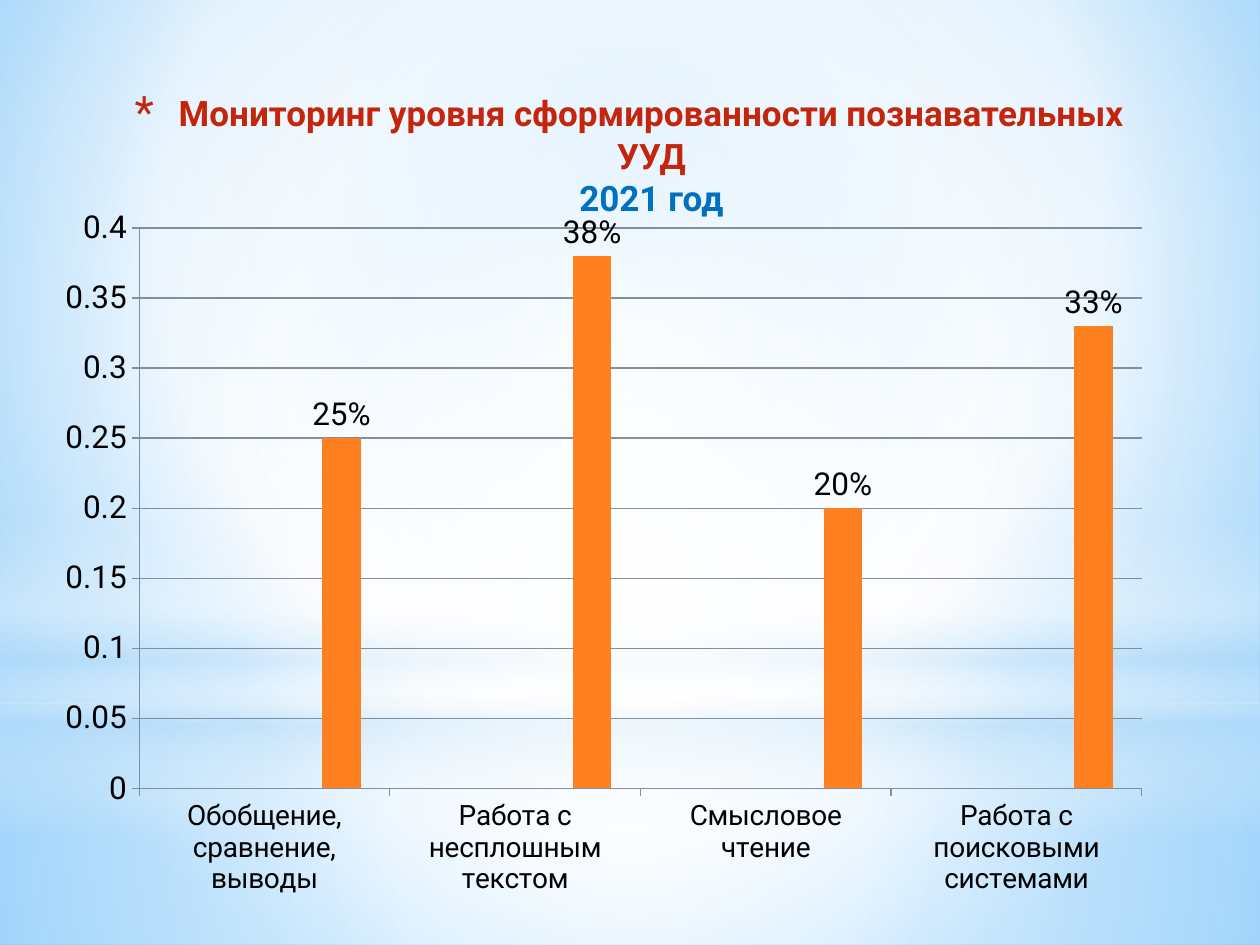
from lxml import etree
from pptx import Presentation
from pptx.chart.data import CategoryChartData
from pptx.dml.color import RGBColor
from pptx.enum.chart import XL_CHART_TYPE as CT, XL_LABEL_POSITION as LP, XL_TICK_MARK as TM
from pptx.enum.shapes import MSO_SHAPE as MS
from pptx.enum.text import MSO_ANCHOR, MSO_AUTO_SIZE, PP_ALIGN
from pptx.oxml import parse_xml
from pptx.oxml.ns import nsdecls, qn
from pptx.util import Inches, Pt

COLORS = {
    "white": "FFFFFF", "pale": "B4DCFA", "sky": "9ED5FF", "azure": "5BB9FF",
    "red": "C3260C", "blue": "0070C0", "black": "000000", "grid": "808FA0",
}
SERIES_COLORS = ["4E67C8", "5ECCF3", "A7EA52", "5DCEAF", "FF8021"]
CENTER = (50, 50, 50, 50)


def rgb(name):
    return RGBColor.from_string(COLORS.get(name, name))


class SlideBuilder:
    font = "Roboto"

    def __init__(self, prs):
        self.s = prs.slides.add_slide(prs.slide_layouts[5])

    def gradient(self, fill, parent, stops, to=None):
        """Fill with (position, colour, opacity) stops: radial towards `to`, else downwards."""
        fill.solid()
        gs = "".join(
            f'<a:gs pos="{pos * 1000}"><a:srgbClr val="{COLORS[color]}">'
            f'<a:alpha val="{opacity * 1000}"/></a:srgbClr></a:gs>'
            for pos, color, opacity in stops)
        if to:
            sides = " ".join(f'{side}="{v * 1000}"' for side, v in zip("ltrb", to))
            shade = f'<a:path path="circle"><a:fillToRect {sides}/></a:path>'
        else:
            shade = '<a:lin ang="5400000" scaled="0"/>'
        solid = parent.find(".//" + qn("a:solidFill"))
        solid.getparent().replace(solid, parse_xml(
            f'<a:gradFill {nsdecls("a")} rotWithShape="1"><a:gsLst>{gs}</a:gsLst>{shade}</a:gradFill>'))

    def background(self, stops, to):
        self.gradient(self.s.background.fill, self.s._element, stops, to)

    def glow(self, kind, top, height, stops, to=None):
        sp = self.s.shapes.add_shape(kind, 0, Inches(top), Inches(10), Inches(height))
        sp.shadow.inherit = False
        sp.line.fill.background()
        self.gradient(sp.fill, sp._element.spPr, stops, to)

    def title(self, box, lines, size):
        sp = self.s.shapes.title
        self.s.shapes._spTree.append(sp._element)  # bring in front of the glows
        sp.left, sp.top, sp.width, sp.height = map(Inches, box)
        tf = sp.text_frame
        tf.word_wrap, tf.auto_size = True, MSO_AUTO_SIZE.NONE
        tf.vertical_anchor = MSO_ANCHOR.TOP
        p = tf.paragraphs[0]
        p.text = "\v".join(text for text, _ in lines)
        p.alignment = PP_ALIGN.CENTER
        for r, (_, color) in zip(p.runs, lines):
            r.font.name, r.font.size, r.font.bold = self.font, Pt(size), True
            r.font.color.rgb = rgb(color)
        for br in p._p.findall(qn("a:br")):
            etree.SubElement(br, qn("a:rPr")).set("sz", str(size * 100))
        self.bullet(p, "*", "red", 128, 0.35)

    def bullet(self, p, char, color, percent, indent):
        pPr = p._p.get_or_add_pPr()
        pPr.set("marL", str(Inches(indent)))
        pPr.set("indent", str(-Inches(indent)))
        for old in list(pPr):
            pPr.remove(old)
        for xml in (f'<a:buClr {{}}><a:srgbClr val="{COLORS[color]}"/></a:buClr>',
                    f'<a:buSzPct {{}} val="{percent * 1000}"/>',
                    f'<a:buFont {{}} typeface="{self.font}"/>',
                    f'<a:buChar {{}} char="{char}"/>'):
            pPr.append(parse_xml(xml.format(nsdecls("a"))))

    def column_chart(self, box, categories, series):
        data = CategoryChartData()
        data.categories = categories
        for name, values in series:
            data.add_series(name, values)
        chart = self.s.shapes.add_chart(CT.COLUMN_CLUSTERED, *map(Inches, box), data).chart
        chart.has_legend = chart.has_title = False
        chart.font.name, chart.font.size = self.font, Pt(18)
        chart.font.color.rgb = rgb("black")
        plot = chart.plots[0]
        plot.gap_width, plot.overlap, plot.vary_by_categories = 150, 0, False
        for ser, color in zip(plot.series, SERIES_COLORS):
            ser.format.fill.solid()
            ser.format.fill.fore_color.rgb = rgb(color)
        labels = plot.series[-1].data_labels
        labels.show_value, labels.position = True, LP.OUTSIDE_END
        labels.number_format, labels.number_format_is_linked = "0%", False
        value_axis, category_axis = chart.value_axis, chart.category_axis
        value_axis.minimum_scale, value_axis.maximum_scale, value_axis.major_unit = 0, 0.4, 0.05
        value_axis.has_major_gridlines = True
        category_axis.tick_labels.font.size = Pt(16)
        for axis in (value_axis, category_axis):
            axis.major_tick_mark, axis.minor_tick_mark = TM.OUTSIDE, TM.NONE
        for part in (value_axis, category_axis, value_axis.major_gridlines):
            part.format.line.color.rgb = rgb("grid")
            part.format.line.width = Pt(0.75)


def main():
    prs = Presentation()
    prs.slide_width, prs.slide_height = Inches(10), Inches(7.5)
    b = SlideBuilder(prs)
    b.background([(0, "sky", 100), (60, "white", 100), (100, "azure", 100)], (20, 10, 20, 60))
    b.glow(MS.RECTANGLE, 5.58, 1.92,
           [(0, "white", 91), (37, "white", 76), (100, "pale", 79)], CENTER)
    b.glow(MS.RECTANGLE, 0, 5.58,
           [(0, "white", 89), (48, "white", 62), (100, "pale", 79)], CENTER)
    b.glow(MS.RECTANGLE, 4.12, 2.5,
           [(0, "white", 0), (29, "white", 30), (45, "pale", 40),
            (55, "white", 26), (65, "pale", 60), (100, "white", 0)])
    b.glow(MS.OVAL, 1.75, 5.58, [(0, "white", 100), (56, "white", 0)], CENTER)
    b.title((0.75, 0.68, 8.49, 0.63),
            [("Мониторинг уровня сформированности познавательных УУД", "red"),
             ("2021 год", "blue")], 20)
    categories = ["Обобщение, сравнение, выводы", "Работа с несплошным текстом",
                  "Смысловое чтение", "Работа с поисковыми системами"]
    series = [(f"Series {i}", [None] * len(categories)) for i in range(1, 5)]
    series.append(("Series 5", [0.25, 0.38, 0.2, 0.33]))
    b.column_chart((0.34, 1.55, 8.9, 5.67), categories, series)
    prs.save("out.pptx")


if __name__ == "__main__":
    main()
